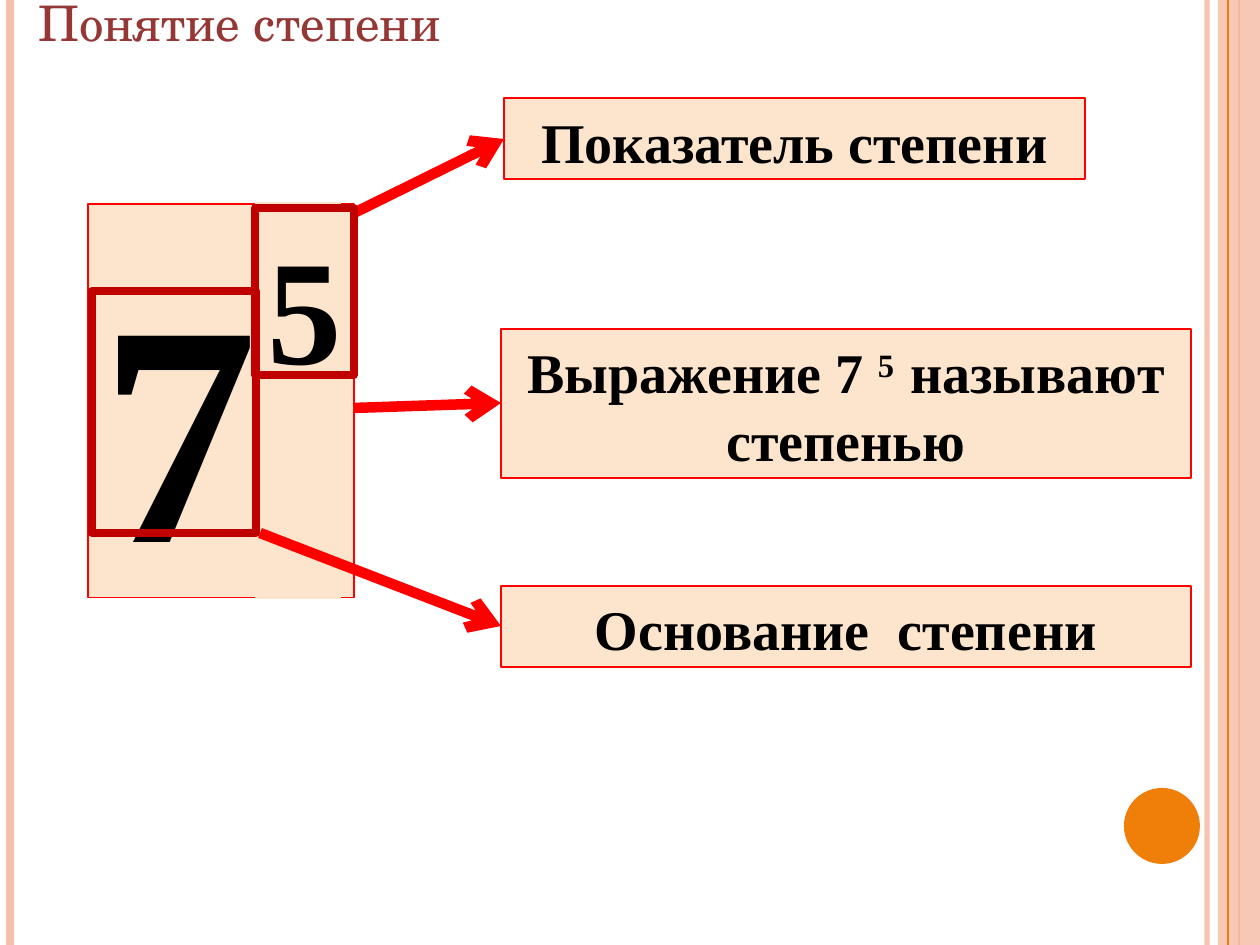
from lxml.etree import SubElement
from pptx import Presentation
from pptx.dml.color import RGBColor
from pptx.enum.shapes import MSO_CONNECTOR as Connector, MSO_SHAPE as Shape
from pptx.enum.text import MSO_ANCHOR as Anchor, PP_ALIGN as Align
from pptx.oxml.ns import qn
from pptx.util import Pt

PX = 914400 // 126
WIDTH, HEIGHT = 1260, 945
PEACH, RED, DARK_RED = "FDE5CD", "FF0000", "C00000"
PINK, ORANGE, BROWN, BLACK = "F6C0AB", "F07F09", "953735", "000000"
SERIF, SCHOOL = "Times New Roman", "TeX Gyre Schola"

# x, colour, width in points, opacity in percent
STRIPES = [(1207, PINK, 3, 93), (10, PINK, 4.5, 100), (1239, ORANGE, 1.5, 100)]
INNER_STRIPE = (1228, ORANGE, 0.75, 100)
SIDE_BAND = (1218, 0, 42, HEIGHT)
DOT = (1124, 788, 76, 76)

TITLE = ("Понятие степени", (26, -14, 432, 72))
# box, runs of (text, superscript percent)
LABELS = [
    ((504, 98, 581, 81), [("Показатель степени", 0)]),
    ((501, 329, 690, 149), [("Выражение 7 ", 0), ("5  ", 30), ("называют степенью", 0)]),
    ((501, 586, 690, 81), [("Основание  степени", 0)]),
]
# box, digit, size, outline
DIGITS = [((88, 204, 266, 394), "7", 180, RED), ((255, 202, 86, 397), "5", 85, None)]
FRAMES = [(255, 208, 99, 167), (92, 291, 164, 242)]
ARROWS = [((260, 533), (501, 626)), ((352, 214), (504, 139)), ((354, 408), (501, 403))]


def px(*lengths):
    return [length * PX for length in lengths]


def rgb(colour):
    return RGBColor.from_string(colour)


def set_opacity(fill_format, percent):
    colour = fill_format._xPr.find(qn("a:solidFill"))[0]
    SubElement(colour, qn("a:alpha")).set("val", str(percent * 1000))


def add_box(page, place, kind=Shape.RECTANGLE, fill=None, line=None, weight=0.75):
    box = page.shapes.add_shape(kind, *px(*place))
    box.shadow.inherit = False
    if fill:
        box.fill.solid()
        box.fill.fore_color.rgb = rgb(fill)
    else:
        box.fill.background()
    if line:
        box.line.color.rgb = rgb(line)
        box.line.width = Pt(weight)
    else:
        box.line.fill.background()
    return box


def add_line(page, start, end, colour, weight, opacity=100, arrow=False):
    line = page.shapes.add_connector(Connector.STRAIGHT, *px(*start, *end))
    line.line.color.rgb = rgb(colour)
    line.line.width = Pt(weight)
    if opacity < 100:
        set_opacity(line.line.fill, opacity)
    properties = line._element.spPr
    if arrow:
        SubElement(properties.find(qn("a:ln")), qn("a:tailEnd")).set("type", "arrow")
    SubElement(properties, qn("a:effectLst"))


def add_text(box, runs, size, font=SERIF, colour=BLACK, bold=True, align=Align.LEFT,
             wrap=True, top=6, leading=None):
    frame = box.text_frame
    frame.word_wrap = wrap
    frame.vertical_anchor = Anchor.TOP
    frame.margin_top = top * PX
    para = frame.paragraphs[0]
    para.alignment = align
    if leading:
        para.line_spacing = Pt(leading)
    for text, raised in runs:
        span = para.add_run()
        span.text = text
        span.font.size = Pt(size)
        span.font.name = font
        span.font.bold = bold
        span.font.color.rgb = rgb(colour)
        if raised:
            span.font._element.set("baseline", str(raised * 1000))


def add_bold_text(box, runs, size, align=Align.LEFT):
    """Lines are 1.2 sizes apart, and the top margin grows with the size."""
    add_text(box, runs, size, align=align, top=round(6 + size / 10), leading=1.2 * size)


def add_stripe(page, x, colour, weight, opacity):
    add_line(page, (x, 0), (x, HEIGHT), colour, weight, opacity)


def add_background(page):
    for stripe in STRIPES:
        add_stripe(page, *stripe)
    set_opacity(add_box(page, SIDE_BAND, fill=PINK).fill, 87)
    add_stripe(page, *INNER_STRIPE)
    add_box(page, DOT, Shape.OVAL, fill=ORANGE)


def main():
    deck = Presentation()
    deck.slide_width, deck.slide_height = px(WIDTH, HEIGHT)
    page = deck.slides.add_slide(deck.slide_layouts[6])
    add_background(page)
    for place, runs in LABELS:
        add_bold_text(add_box(page, place, fill=PEACH, line=RED), runs, 32, Align.CENTER)
    for place, digit, size, outline in DIGITS:
        add_bold_text(add_box(page, place, fill=PEACH, line=outline), [(digit, 0)], size)
    for start, end in ARROWS:
        add_line(page, start, end, RED, 6, arrow=True)
    for place in FRAMES:
        add_box(page, place, line=DARK_RED, weight=4.5)
    title, place = TITLE
    add_text(page.shapes.add_textbox(*px(*place)), [(title, 0)], 28, font=SCHOOL,
             colour=BROWN, bold=False, wrap=False)
    deck.save("out.pptx")


if __name__ == "__main__":
    main()
